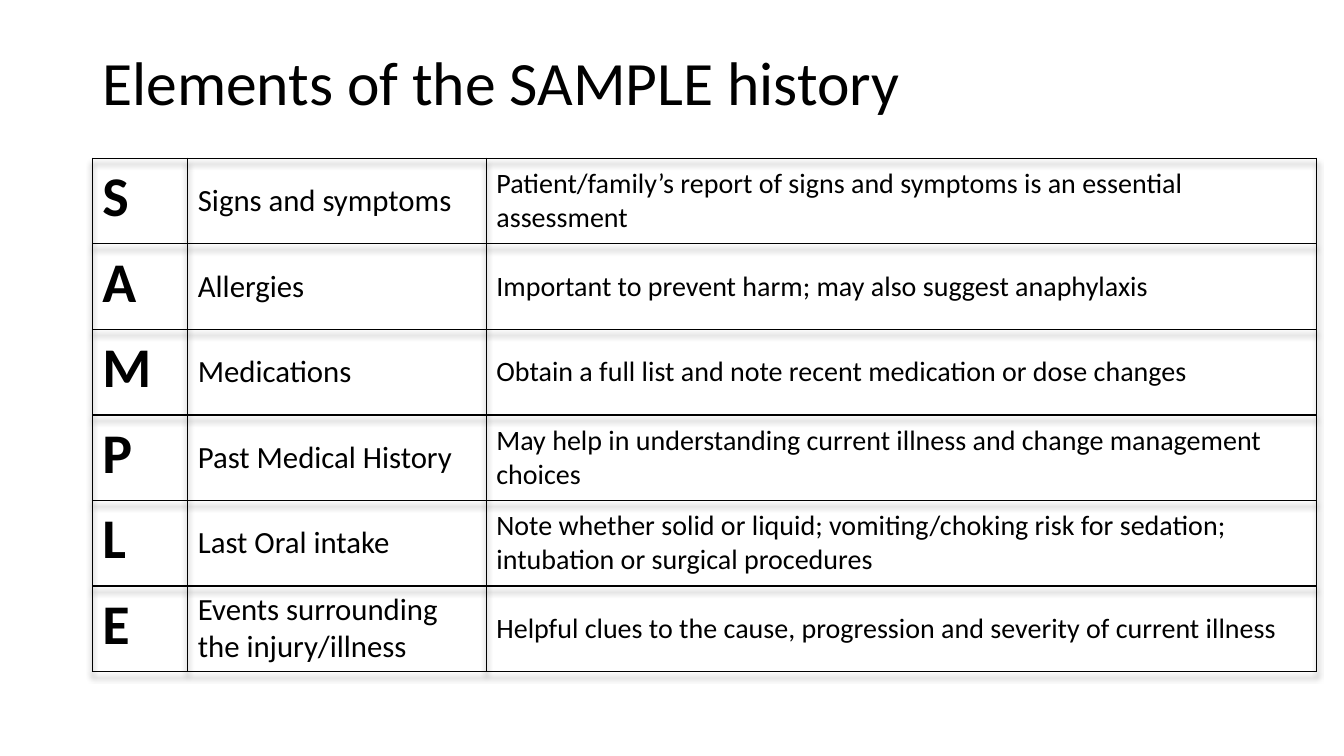
import pptx
import pptx.util
import pptx.dml.color
import pptx.enum.text
import pptx.oxml

Pt = pptx.util.Pt
MIDDLE = pptx.enum.text.MSO_ANCHOR.MIDDLE
TOP = pptx.enum.text.MSO_ANCHOR.TOP
NS = 'xmlns:a="http://schemas.openxmlformats.org/drawingml/2006/main"'


def color(hex_string):
    return pptx.dml.color.RGBColor.from_string(hex_string)


def write(tf, text, size, bold=False):
    p = tf.paragraphs[0]
    p.text = text
    p.font.name = "Calibri"
    p.font.size = Pt(size)
    p.font.bold = bold
    p.font.color.rgb = color("000000")
    return p


prs = pptx.Presentation()
prs.slide_width = Pt(960)
prs.slide_height = Pt(540)
s = prs.slides.add_slide(prs.slide_layouts[6])

title = s.shapes.add_textbox(Pt(66), Pt(8.7), Pt(828), Pt(104.4))
tf = title.text_frame
tf.word_wrap = True
tf.vertical_anchor = MIDDLE
write(tf, "Elements of the SAMPLE history", 44).line_spacing = 0.9

rows = [
    ("S", "Signs and symptoms",
     "Patient/family’s report of signs and symptoms is an essential assessment"),
    ("A", "Allergies",
     "Important to prevent harm; may also suggest anaphylaxis"),
    ("M", "Medications",
     "Obtain a full list and note recent medication or dose changes"),
    ("P", "Past Medical History",
     "May help in understanding current illness and change management choices"),
    ("L", "Last Oral intake",
     "Note whether solid or liquid; vomiting/choking risk for sedation; "
     "intubation or surgical procedures"),
    ("E", "Events surrounding the injury/illness",
     "Helpful clues to the cause, progression and severity of current illness"),
]
widths = [68.2, 213.2, 593]
row_height = 61.1
styles = [(40, True, TOP), (22, False, MIDDLE), (20, False, MIDDLE)]

frame = s.shapes.add_table(len(rows), len(widths), Pt(66), Pt(113.1),
                           Pt(sum(widths)), Pt(row_height * len(rows)))
table = frame.table
table.first_row = False
table.horz_banding = False
table._tbl.tblPr.insert(0, pptx.oxml.parse_xml(
    f'<a:effectLst {NS}><a:outerShdw blurRad="50800" dist="50800" dir="5400000">'
    '<a:srgbClr val="000000"><a:alpha val="40000"/></a:srgbClr>'
    '</a:outerShdw></a:effectLst>'))

for column, width in zip(table.columns, widths):
    column.width = Pt(width)

for i, row in enumerate(rows):
    table.rows[i].height = Pt(row_height)
    for j, (text, (size, bold, anchor)) in enumerate(zip(row, styles)):
        cell = table.cell(i, j)
        cell.vertical_anchor = anchor
        write(cell.text_frame, text, size, bold)
        cell.fill.background()
        tcPr = cell._tc.get_or_add_tcPr()
        for k, side in enumerate(("lnL", "lnR", "lnT", "lnB")):
            tcPr.insert(k, pptx.oxml.parse_xml(
                f'<a:{side} {NS} w="12700"><a:solidFill>'
                f'<a:srgbClr val="000000"/></a:solidFill></a:{side}>'))

prs.save("out.pptx")
